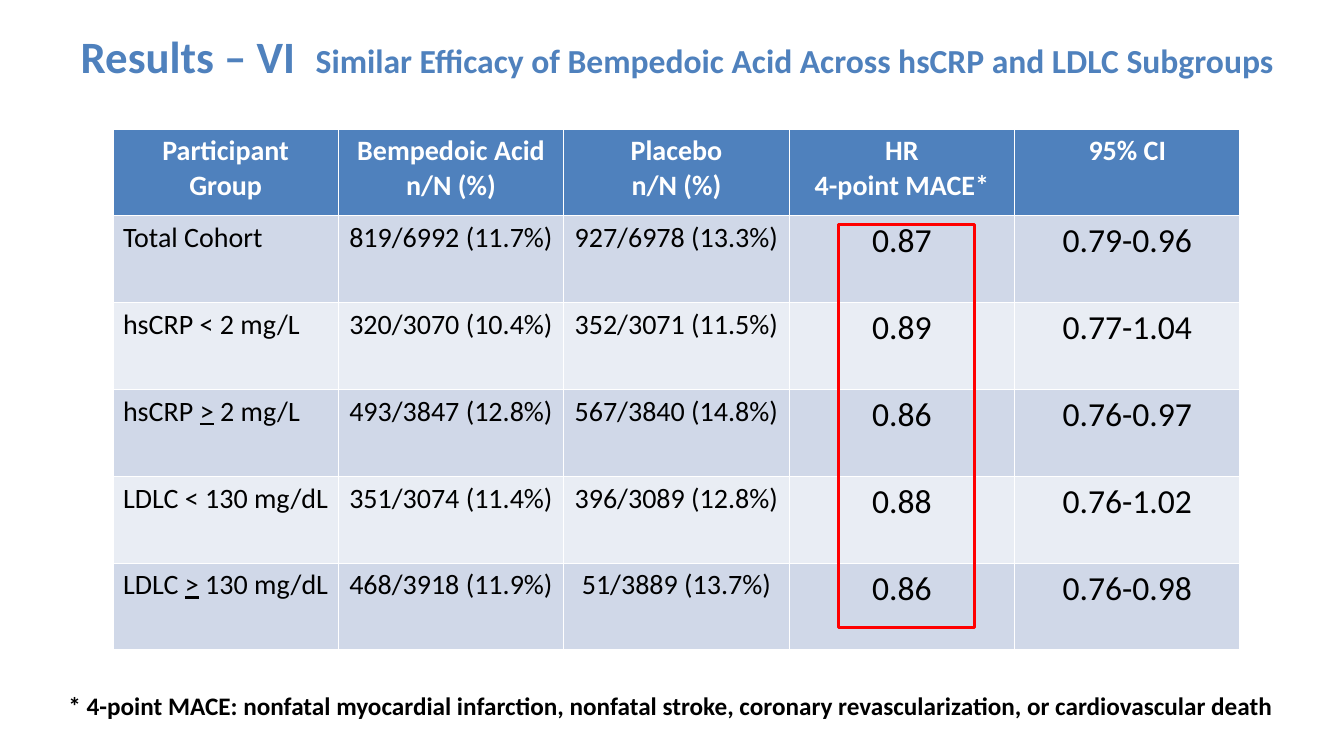
import pptx
import pptx.dml.color
import pptx.enum.shapes
import pptx.enum.text
import pptx.util

Inches, Pt = pptx.util.Inches, pptx.util.Pt
ALIGN = pptx.enum.text.PP_ALIGN
COLORS = {"blue": "4F81BD", "band": "D0D8E8", "light": "E9EDF4",
          "white": "FFFFFF", "black": "000000", "red": "FF0000"}
FONT = "Calibri"
HEADERS = ["Participant Group", "Bempedoic Acid\nn/N (%)", "Placebo\nn/N (%)",
           "HR\n4-point MACE*", "95% CI"]
RESULTS = [
    ["Total Cohort", "819/6992 (11.7%)", "927/6978 (13.3%)", "0.87", "0.79-0.96"],
    ["hsCRP < 2 mg/L", "320/3070 (10.4%)", "352/3071 (11.5%)", "0.89", "0.77-1.04"],
    ["hsCRP > 2 mg/L", "493/3847 (12.8%)", "567/3840 (14.8%)", "0.86", "0.76-0.97"],
    ["LDLC < 130 mg/dL", "351/3074 (11.4%)", "396/3089 (12.8%)", "0.88", "0.76-1.02"],
    ["LDLC > 130 mg/dL", "468/3918 (11.9%)", "51/3889 (13.7%)", "0.86", "0.76-0.98"],
]


def rgb(name):
    """Return the named colour."""
    return pptx.dml.color.RGBColor.from_string(COLORS[name])


def style(font, size, color, bold=False):
    """Set the face, size, colour and weight of a font."""
    font.name, font.size, font.bold = FONT, Pt(size), bold
    font.color.rgb = rgb(color)


def fit_one_line(tf):
    """Make a text frame hold one unwrapped line."""
    tf.word_wrap = False
    tf.auto_size = pptx.enum.text.MSO_AUTO_SIZE.SHAPE_TO_FIT_TEXT
    tf.vertical_anchor = pptx.enum.text.MSO_ANCHOR.TOP


def add_title(slide, x, y, w, h):
    """Place the two-size title in the given box."""
    sp = slide.shapes.title
    sp.left, sp.top, sp.width, sp.height = map(Inches, (x, y, w, h))
    fit_one_line(sp.text_frame)
    p = sp.text_frame.paragraphs[0]
    p.alignment = ALIGN.LEFT
    for text, size in (("Results – VI  ", 32),
                       ("Similar Efficacy of Bempedoic Acid Across hsCRP and LDLC Subgroups", 24)):
        r = p.add_run()
        r.text = text
        style(r.font, size, "blue", True)


def fill_cell(cell, text, row, col):
    """Write and format one table cell by its row and column."""
    header = row == 0
    cell.fill.solid()
    cell.fill.fore_color.rgb = rgb("blue" if header else "band" if row % 2 else "light")
    tf = cell.text_frame
    if ">" in text:
        before, after = text.split(">")
        for part in (before, ">", after):
            r = tf.paragraphs[0].add_run()
            r.text = part
            r.font.underline = part == ">"
    else:
        tf.text = text
    for p in tf.paragraphs:
        p.alignment = ALIGN.CENTER if header or col else ALIGN.LEFT
        style(p.font, 24 if not header and col > 2 else 20,
              "white" if header else "black", header)


def add_results(slide, x, y, w, h):
    """Place the results table and outline its hazard ratios."""
    rows = [HEADERS] + RESULTS
    col_w, row_h = w / len(HEADERS), h / len(rows)
    table = slide.shapes.add_table(len(rows), len(HEADERS),
                                   *map(Inches, (x, y, w, h))).table
    for i, row in enumerate(rows):
        for j, text in enumerate(row):
            fill_cell(table.cell(i, j), text, i, j)

    box = (x + 3.22 * col_w, y + 1.1 * row_h, 0.6 * col_w, 4.64 * row_h)
    sp = slide.shapes.add_shape(pptx.enum.shapes.MSO_SHAPE.RECTANGLE, *map(Inches, box))
    sp.shadow.inherit = False
    sp.fill.background()
    sp.line.color.rgb = rgb("red")
    sp.line.width = Pt(2.25)


def add_footnote(slide, x, y, w, h):
    """Place the endpoint definition in the given box."""
    tf = slide.shapes.add_textbox(*map(Inches, (x, y, w, h))).text_frame
    fit_one_line(tf)
    tf.text = ("* 4-point MACE: nonfatal myocardial infarction, nonfatal stroke, "
               "coronary revascularization, or cardiovascular death")
    style(tf.paragraphs[0].font, 18, "black", True)


def main():
    """Build and save the results slide."""
    prs = pptx.Presentation()
    prs.slide_width, prs.slide_height = Inches(13.33), Inches(7.5)
    slide = prs.slides.add_slide(prs.slide_layouts[5])
    add_title(slide, 0.7, 0.23, 12.28, 0.64)
    add_results(slide, 1.12, 1.28, 11.18, 5.17)
    add_footnote(slide, 0.58, 6.8, 12.19, 0.4)
    prs.save("out.pptx")


if __name__ == "__main__":
    main()
